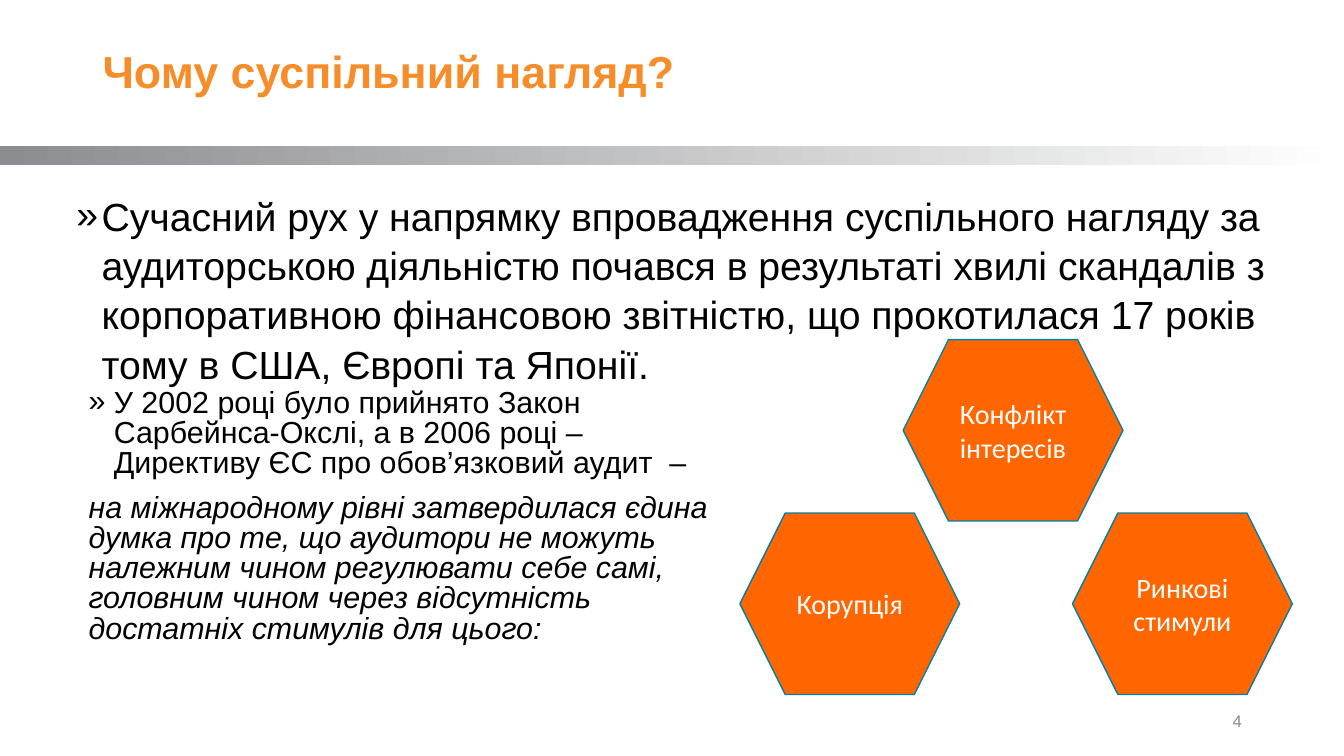
import pptx
import pptx.util
import pptx.dml.color
import pptx.enum.shapes
import pptx.enum.text
import pptx.oxml
import pptx.oxml.ns

Pt = pptx.util.Pt
ALIGN = pptx.enum.text.PP_ALIGN
ANCHOR = pptx.enum.text.MSO_ANCHOR
SHAPE = pptx.enum.shapes.MSO_SHAPE

COLORS = {"title": "F78D28", "text": "000000", "gray": "8C8D90",
          "white": "FFFFFF", "hex": "FF6600", "edge": "0080A9"}

TITLE = "Чому суспільний нагляд?"
LEAD = ("Сучасний рух у напрямку впровадження суспільного нагляду за "
        "аудиторською діяльністю почався в результаті хвилі скандалів з "
        "корпоративною фінансовою звітністю, що прокотилася 17 років тому "
        "в США, Європі та Японії.")
LAW = ("У 2002 році було прийнято Закон Сарбейнса-Окслі, а в 2006 році – "
       "Директиву ЄС про обов’язковий аудит  –")
VIEW = ("на міжнародному рівні затвердилася єдина думка про те, що аудитори "
        "не можуть належним чином регулювати себе самі, головним чином через "
        "відсутність достатніх стимулів для цього:")
PAGE = "4"

HEX_SIZE = (157, 129.6)
TOP_ROW, LOW_ROW = 242.6, 366.5
CAUSES = [("Конфлікт інтересів", 645.1, TOP_ROW),
          ("Корупція", 528.5, LOW_ROW),
          ("Ринкові стимули", 766.1, LOW_ROW)]
INDENT = 18


def color(name):
    return pptx.dml.color.RGBColor.from_string(COLORS[name])


def style(para, size, tint, face="Arial", bold=False, italic=False):
    for run in para.runs:
        font = run.font
        font.size, font.name = Pt(size), face
        font.bold, font.italic = bold, italic
        font.color.rgb = color(tint)


def bullet(para):
    props = para._p.get_or_add_pPr()
    props.set("marL", str(Pt(INDENT)))
    props.set("indent", str(-Pt(INDENT)))
    space = pptx.oxml.ns.nsdecls("a")
    for tag in ('<a:buFont %s typeface="Arial"/>', '<a:buChar %s char="»"/>'):
        props.append(pptx.oxml.parse_xml(tag % space))


def add_text(slide, box, texts, anchor=ANCHOR.TOP):
    frame = slide.shapes.add_textbox(*map(Pt, box)).text_frame
    frame.word_wrap = True
    frame.vertical_anchor = anchor
    frame.text = "\n".join(texts)
    return frame.paragraphs


def add_band(slide):
    band = slide.shapes.add_shape(SHAPE.RECTANGLE, 0, Pt(104.4), Pt(960), Pt(13.7))
    band.shadow.inherit = False
    band.line.fill.background()
    band.fill.gradient()
    band.fill.gradient_angle = 0
    for stop, tint in zip(band.fill.gradient_stops, ("gray", "white")):
        stop.color.rgb = color(tint)


def add_cause(slide, text, left, top):
    cell = slide.shapes.add_shape(SHAPE.HEXAGON, Pt(left), Pt(top), *map(Pt, HEX_SIZE))
    cell.shadow.inherit = False
    cell.fill.solid()
    cell.fill.fore_color.rgb = color("hex")
    cell.line.color.rgb = color("edge")
    cell.line.width = Pt(1)
    frame = cell.text_frame
    frame.word_wrap = True
    frame.vertical_anchor = ANCHOR.MIDDLE
    frame.text = text
    para = frame.paragraphs[0]
    para.alignment = ALIGN.CENTER
    style(para, 20, "white", "Calibri")


def main():
    deck = pptx.Presentation()
    deck.slide_width, deck.slide_height = Pt(960), Pt(540)
    slide = deck.slides.add_slide(deck.slide_layouts[6])
    add_band(slide)

    page, = add_text(slide, (678.2, 500.4, 216, 28.8), [PAGE], ANCHOR.MIDDLE)
    page.alignment = ALIGN.RIGHT
    style(page, 12, "gray")

    title, = add_text(slide, (66.2, 18.7, 828, 68.4), [TITLE], ANCHOR.MIDDLE)
    title.line_spacing = 0.9
    style(title, 32, "title", bold=True)

    lead, = add_text(slide, (47.5, 131.8, 864.7, 386.6), [LEAD])
    lead.line_spacing = 1.05
    bullet(lead)
    style(lead, 28, "text")

    law, view = add_text(slide, (56.2, 274.3, 477.4, 244.1), [LAW, VIEW])
    law.line_spacing = view.line_spacing = 0.83
    view.space_before = Pt(10)
    bullet(law)
    style(law, 21.7, "text")
    style(view, 21.7, "text", italic=True)

    for cause in CAUSES:
        add_cause(slide, *cause)
    deck.save("out.pptx")


if __name__ == "__main__":
    main()
